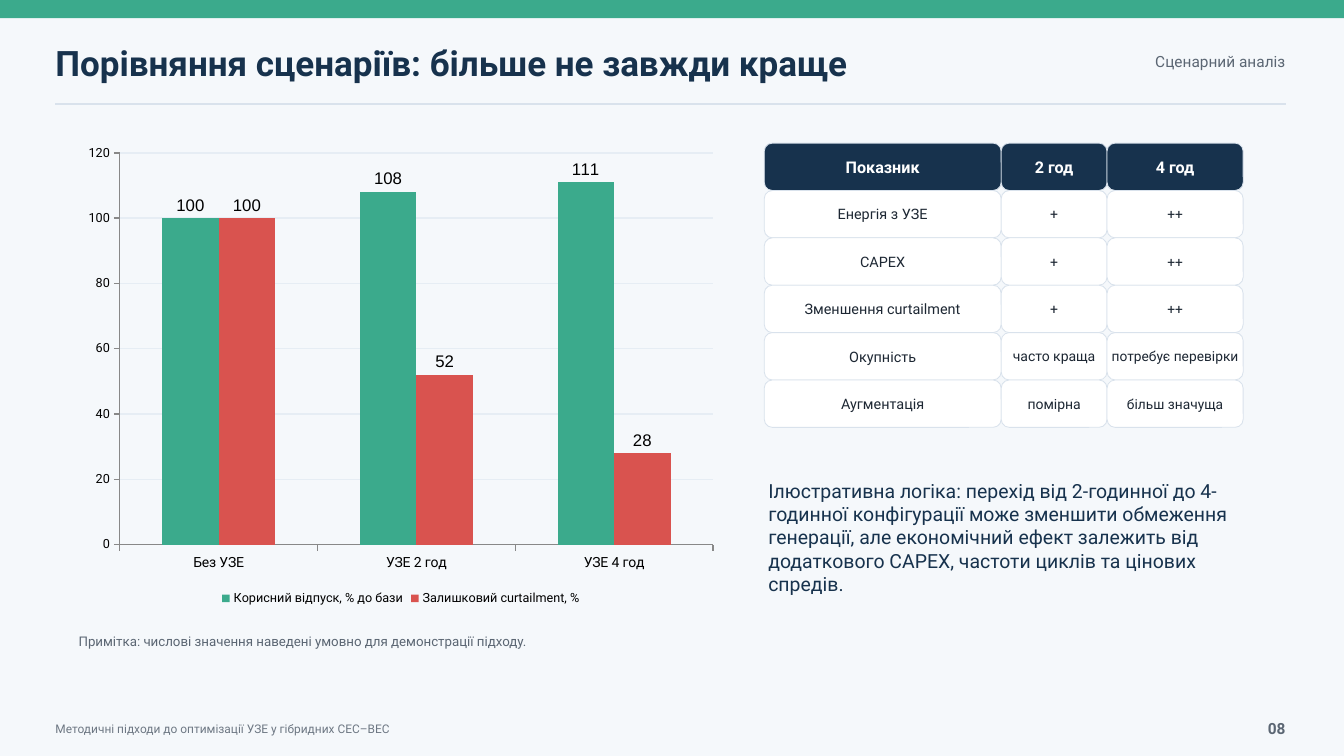
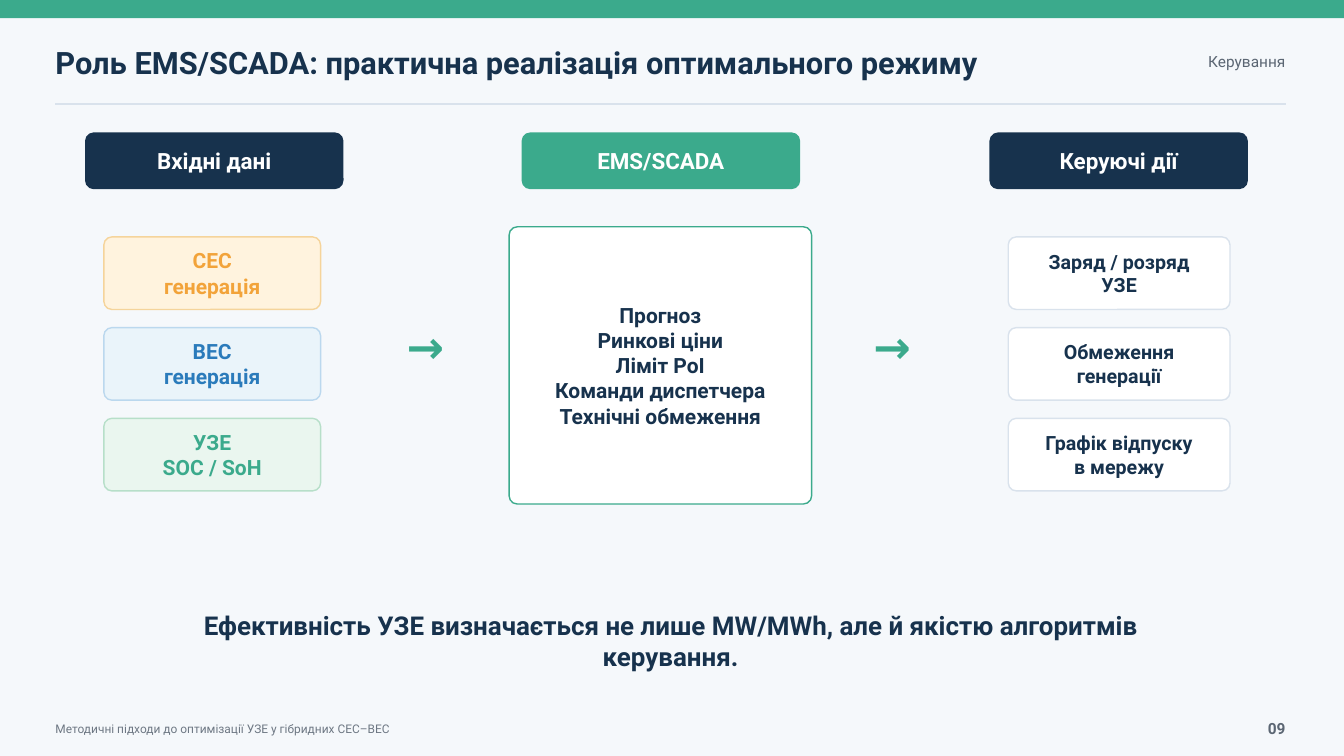
from pptx import Presentation
from pptx import util as u
from pptx.chart import data as chart_data
from pptx.dml.color import RGBColor
from pptx.enum import chart as ch, shapes, text
from pptx.oxml.ns import qn

Inches = u.Inches
FONT = "Roboto"
BACKGROUND = RGBColor(0xF5, 0xF8, 0xFB)
WHITE = RGBColor(0xFF, 0xFF, 0xFF)
BLACK = RGBColor(0, 0, 0)
NAVY = RGBColor(0x17, 0x32, 0x4D)
GREEN = RGBColor(0x3B, 0xAA, 0x8C)
RED = RGBColor(0xD9, 0x53, 0x4F)
INK = RGBColor(0x1D, 0x27, 0x33)
SLATE = RGBColor(0x5B, 0x66, 0x73)
FOOTER_GRAY = RGBColor(0x6D, 0x77, 0x83)
RULE = RGBColor(0xD9, 0xE2, 0xEC)
GRID = RGBColor(0xE6, 0xED, 0xF4)
AXIS = RGBColor(0x88, 0x88, 0x88)
AMBER = RGBColor(0xF2, 0xA3, 0x3A)
AMBER_FILL = RGBColor(0xFF, 0xF3, 0xDE)
AMBER_LINE = RGBColor(0xF5, 0xD4, 0x9B)
BLUE = RGBColor(0x2B, 0x7B, 0xBB)
BLUE_FILL = RGBColor(0xEA, 0xF4, 0xFA)
BLUE_LINE = RGBColor(0xBB, 0xD8, 0xEE)
MINT_FILL = RGBColor(0xEA, 0xF6, 0xEF)
MINT_LINE = RGBColor(0xB7, 0xDF, 0xC9)

LEFT, CENTER, RIGHT = text.PP_ALIGN.LEFT, text.PP_ALIGN.CENTER, text.PP_ALIGN.RIGHT
TOP, MIDDLE = text.MSO_ANCHOR.TOP, text.MSO_ANCHOR.MIDDLE
MARGIN, RIGHT_EDGE = 0.55, 12.75
CORNER = 0.08


def style_font(font, size, color, bold=False, name=FONT):
    font.name, font.size, font.bold = name, u.Pt(size), bold
    font.color.rgb = color


def write(shape, words, size=11, color=NAVY, bold=False, align=LEFT, anchor=MIDDLE):
    """Fill a shape with one paragraph per line of words, without insets."""
    frame = shape.text_frame
    frame.word_wrap = True
    frame.vertical_anchor = anchor
    frame.margin_left = frame.margin_right = frame.margin_top = frame.margin_bottom = 0
    for i, line in enumerate(words.split("\n")):
        para = frame.paragraphs[0] if i == 0 else frame.add_paragraph()
        para.alignment = align
        span = para.add_run()
        span.text = line
        style_font(span.font, size, color, bold)


def add_text(page, box, words, **format_):
    write(page.shapes.add_textbox(*map(Inches, box)), words, **format_)


def add_card(page, box, words, fill, line, line_width=1, **format_):
    """Add a rounded box whose corner radius is the same at every size."""
    card = page.shapes.add_shape(shapes.MSO_SHAPE.ROUNDED_RECTANGLE, *map(Inches, box))
    card.adjustments[0] = CORNER / min(box[2:])
    card.shadow.inherit = False
    card.fill.solid()
    card.fill.fore_color.rgb = fill
    card.line.color.rgb = line
    card.line.width = u.Pt(line_width)
    write(card, words, align=CENTER, **format_)


def add_page(deck, title, section, number, title_size=25):
    """Add a page with the band, title, section, rule and footer."""
    page = deck.slides.add_slide(deck.slide_layouts[6])
    page.background.fill.solid()
    page.background.fill.fore_color.rgb = BACKGROUND

    band = page.shapes.add_shape(shapes.MSO_SHAPE.RECTANGLE, 0, 0, deck.slide_width, Inches(0.18))
    band.shadow.inherit = False
    band.fill.solid()
    band.fill.fore_color.rgb = GREEN
    band.line.fill.background()

    add_text(page, (MARGIN, 0.35, 9.4, 0.54), title, size=title_size, bold=True)
    add_text(page, (10.3, 0.43, 2.45, 0.35), section, color=SLATE, align=RIGHT)

    rule = page.shapes.add_connector(
        shapes.MSO_CONNECTOR.STRAIGHT,
        Inches(MARGIN), Inches(1.03), Inches(RIGHT_EDGE), Inches(1.03))
    rule.line.color.rgb = RULE
    rule.line.width = u.Pt(1)
    properties = rule._element.spPr
    properties.append(properties.makeelement(qn("a:effectLst"), {}))

    add_text(page, (MARGIN, 7.12, 8.5, 0.22),
             "Методичні підходи до оптимізації УЗЕ у гібридних СЕС–ВЕС",
             size=8.5, color=FOOTER_GRAY)
    add_text(page, (12.2, 7.05, 0.55, 0.35), number, color=SLATE, bold=True, align=RIGHT)
    return page


def add_scenario_chart(page, box):
    data = chart_data.CategoryChartData(number_format="#,##0")
    data.categories = ["Без УЗЕ", "УЗЕ 2 год", "УЗЕ 4 год"]
    data.add_series("Корисний відпуск, % до бази", (100, 108, 111))
    data.add_series("Залишковий curtailment, %", (100, 52, 28))
    chart = page.shapes.add_chart(
        ch.XL_CHART_TYPE.COLUMN_CLUSTERED, *map(Inches, box), data).chart
    chart.has_title = False
    style_font(chart.font, 10, BLACK)
    chart.has_legend = True
    chart.legend.position = ch.XL_LEGEND_POSITION.BOTTOM
    chart.legend.include_in_layout = False
    style_font(chart.legend.font, 9, BLACK)

    for axis, size in ((chart.category_axis, 10), (chart.value_axis, 9)):
        style_font(axis.tick_labels.font, size, BLACK)
        axis.major_tick_mark = ch.XL_TICK_MARK.OUTSIDE
        axis.minor_tick_mark = ch.XL_TICK_MARK.NONE
        axis.format.line.color.rgb = AXIS
        axis.format.line.width = u.Pt(1)
    chart.category_axis.tick_label_position = ch.XL_TICK_LABEL_POSITION.LOW
    values = chart.value_axis
    values.minimum_scale, values.maximum_scale, values.major_unit = 0, 120, 20
    values.tick_labels.number_format = "General"
    values.tick_labels.number_format_is_linked = False
    values.has_major_gridlines = True
    values.major_gridlines.format.line.color.rgb = GRID
    values.major_gridlines.format.line.width = u.Pt(1)

    plot = chart.plots[0]
    plot.gap_width, plot.overlap, plot.vary_by_categories = 150, 0, False
    for series, color in zip(plot.series, (GREEN, RED)):
        series.format.fill.solid()
        series.format.fill.fore_color.rgb = color
        series.invert_if_negative = False
        labels = series.data_labels
        labels.show_value = True
        labels.number_format = "#,##0"
        labels.number_format_is_linked = False
        labels.position = ch.XL_LABEL_POSITION.OUTSIDE_END
        style_font(labels.font, 12, BLACK, name="Arial")


def add_card_grid(page, left, top, rows, columns, row_height=0.47):
    """Lay out rows as touching cards; columns holds (width, body size) pairs."""
    for i, row in enumerate(rows):
        x = left
        for words, (width, body_size) in zip(row, columns):
            if i == 0:
                look = dict(fill=NAVY, size=11.5, color=WHITE, bold=True)
            else:
                look = dict(fill=WHITE, size=body_size, color=INK)
            add_card(page, (x, top + i * row_height, width, row_height), words,
                     line=RULE, line_width=0.6, **look)
            x += width


def add_card_stack(page, left, width, cards, size):
    """Stack cards of (words, fill, line, text colour) at an equal pitch."""
    top, height, gap = 2.35, 0.72, 0.18
    for i, (words, fill, line, color) in enumerate(cards):
        add_card(page, (left, top + i * (height + gap), width, height), words,
                 fill, line, size=size, color=color, bold=True)


def build_scenarios(deck):
    page = add_page(deck, "Порівняння сценаріїв: більше не завжди краще", "Сценарний аналіз", "08")
    add_scenario_chart(page, (0.75, 1.35, 6.45, 4.7))
    rows = [
        ("Показник", "2 год", "4 год"),
        ("Енергія з УЗЕ", "+", "++"),
        ("CAPEX", "+", "++"),
        ("Зменшення curtailment", "+", "++"),
        ("Окупність", "часто краща", "потребує перевірки"),
        ("Аугментація", "помірна", "більш значуща"),
    ]
    add_card_grid(page, 7.58, 1.42, rows, [(2.35, 10.3), (1.05, 10), (1.35, 9.8)])
    add_text(page, (7.62, 4.75, 4.72, 1),
             "Ілюстративна логіка: перехід від 2-годинної до 4-годинної конфігурації "
             "може зменшити обмеження генерації, але економічний ефект залежить від "
             "додаткового CAPEX, частоти циклів та цінових спредів.",
             size=13.9, anchor=TOP)
    add_text(page, (0.78, 6.28, 10.5, 0.25),
             "Примітка: числові значення наведені умовно для демонстрації підходу.",
             size=9.5, color=SLATE, anchor=TOP)


def build_control(deck):
    page = add_page(deck, "Роль EMS/SCADA: практична реалізація оптимального режиму",
                    "Керування", "09", title_size=22)
    for left, width, words, color in (
            (0.85, 2.55, "Вхідні дані", NAVY),
            (5.18, 2.75, "EMS/SCADA", GREEN),
            (9.82, 2.55, "Керуючі дії", NAVY)):
        add_card(page, (left, 1.32, width, 0.55), words, color, color,
                 size=16, color=WHITE, bold=True)
    for left in (3.92, 8.55):
        add_text(page, (left, 3.18, 0.6, 0.5), "→", size=32, color=GREEN, bold=True, align=CENTER)

    add_card_stack(page, 1.03, 2.15, [
        ("СЕС\nгенерація", AMBER_FILL, AMBER_LINE, AMBER),
        ("ВЕС\nгенерація", BLUE_FILL, BLUE_LINE, BLUE),
        ("УЗЕ\nSOC / SoH", MINT_FILL, MINT_LINE, GREEN),
    ], size=15)
    add_card(page, (5.05, 2.25, 3, 2.75),
             "Прогноз\nРинкові ціни\nЛіміт PoI\nКоманди диспетчера\nТехнічні обмеження",
             WHITE, GREEN, size=15, bold=True)
    actions = ("Заряд / розряд\nУЗЕ", "Обмеження\nгенерації", "Графік відпуску\nв мережу")
    add_card_stack(page, 10, 2.2, [(words, WHITE, RULE, NAVY) for words in actions], size=14)

    add_text(page, (1.45, 6.05, 10.4, 0.45),
             "Ефективність УЗЕ визначається не лише MW/MWh, але й якістю алгоритмів керування.",
             size=18.5, bold=True, align=CENTER, anchor=TOP)


def main():
    deck = Presentation()
    deck.slide_width, deck.slide_height = Inches(13.33), Inches(7.5)
    build_scenarios(deck)
    build_control(deck)
    deck.save("out.pptx")


if __name__ == "__main__":
    main()
